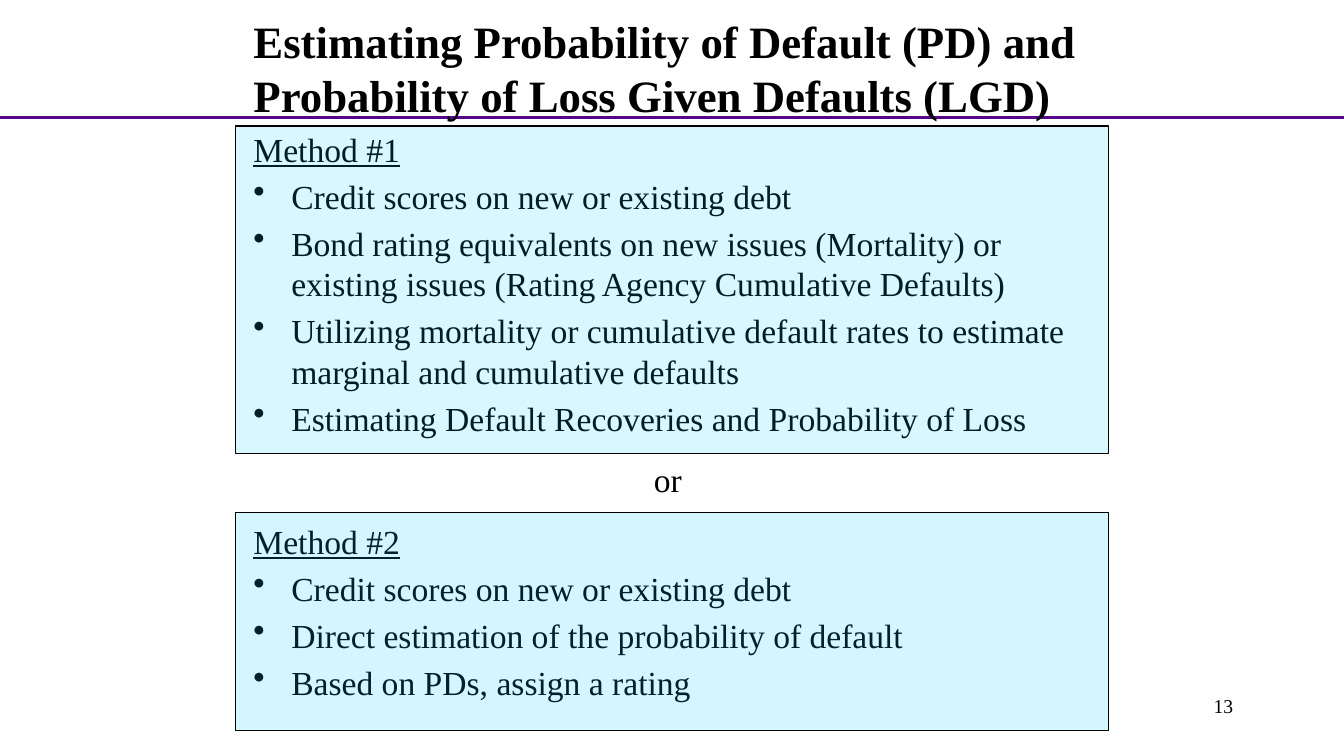
from pptx import Presentation
from pptx.dml.color import RGBColor
from pptx.enum.shapes import MSO_CONNECTOR, MSO_SHAPE
from pptx.enum.text import MSO_ANCHOR, PP_ALIGN
from pptx.oxml.ns import qn
from pptx.util import Pt
from lxml.etree import SubElement

# Content
TITLE = ("Estimating Probability of Default (PD) and "
         "Probability of Loss Given Defaults (LGD)")
# heading, bullets, panel top, panel height, text top, fill opacity %
METHODS = [
    ("Method #1", [
        "Credit scores on new or existing debt",
        "Bond rating equivalents on new issues (Mortality) or "
        "existing issues (Rating Agency Cumulative Defaults)",
        "Utilizing mortality or cumulative default rates to estimate "
        "marginal and cumulative defaults",
        "Estimating Default Recoveries and Probability of Loss",
    ], 90, 234, 92, 15),
    ("Method #2", [
        "Credit scores on new or existing debt",
        "Direct estimation of the probability of default",
        "Based on PDs, assign a rating",
    ], 366, 156, 372, 17),
]
FONT, BLACK, PURPLE, CYAN = "Times New Roman", "000000", "57068C", "00CCFF"
WIDE, HIGH = 960, 540
LEFT, SPAN = 174, 612
INDENT = 27


def color(code):
    return RGBColor.from_string(code)


def style(para, size, bold=False, under=False):
    for run in para.runs:
        font = run.font
        font.name, font.size = FONT, Pt(size)
        font.bold, font.underline = bold, under
        font.color.rgb = color(BLACK)


def add_box(x, y, w, h, pad=3.6):
    box = slide.shapes.add_textbox(Pt(x), Pt(y), Pt(w), Pt(h))
    frame = box.text_frame
    frame.word_wrap = True
    frame.margin_top = frame.margin_bottom = Pt(pad)
    return frame


def add_label(text, x, y, w, h, size, align, bold=False):
    frame = add_box(x, y, w, h)
    frame.text = text
    para = frame.paragraphs[0]
    para.alignment = align
    style(para, size, bold)
    return frame


def add_bullet(para):
    props = para._p.get_or_add_pPr()
    props.set("marL", str(Pt(INDENT)))
    props.set("indent", str(-Pt(INDENT)))
    SubElement(props, qn("a:buChar")).set("char", "•")


def add_panel(y, h, alpha):
    panel = slide.shapes.add_shape(
        MSO_SHAPE.RECTANGLE, Pt(168), Pt(y), Pt(624), Pt(h))
    panel.shadow.inherit = False
    panel.fill.solid()
    panel.fill.fore_color.rgb = color(CYAN)
    tint = panel._element.spPr.find(qn("a:solidFill"))[0]
    SubElement(tint, qn("a:alpha")).set("val", str(alpha * 1000))
    panel.line.color.rgb = color(BLACK)
    panel.line.width = Pt(0.75)


deck = Presentation()
deck.slide_width, deck.slide_height = Pt(WIDE), Pt(HIGH)
slide = deck.slides.add_slide(deck.slide_layouts[6])

# Rule under the title
rule = slide.shapes.add_connector(
    MSO_CONNECTOR.STRAIGHT, Pt(0), Pt(84), Pt(WIDE), Pt(84))
rule.line.color.rgb = color(PURPLE)
rule.line.width = Pt(2.25)
SubElement(rule._element.spPr, qn("a:effectLst"))

# Title, page number and the word between the panels
head = add_label(TITLE, LEFT, 18, SPAN, 60, 32, PP_ALIGN.LEFT, True)
head.vertical_anchor = MSO_ANCHOR.MIDDLE
add_label("13", 688, 492, 200, 36, 14, PP_ALIGN.RIGHT)
add_label("or", LEFT, 324, 606, 36, 24, PP_ALIGN.CENTER)

# Method lists, each under its tinted panel
for name, items, top, tall, start, alpha in METHODS:
    frame = add_box(LEFT, start, SPAN, top + tall - start, 0)
    frame.text = name
    style(frame.paragraphs[0], 24, under=True)
    for item in items:
        para = frame.add_paragraph()
        para.text = item
        add_bullet(para)
        para.space_before = Pt(4.8)
        style(para, 24)
    add_panel(top, tall, alpha)

deck.save("out.pptx")
